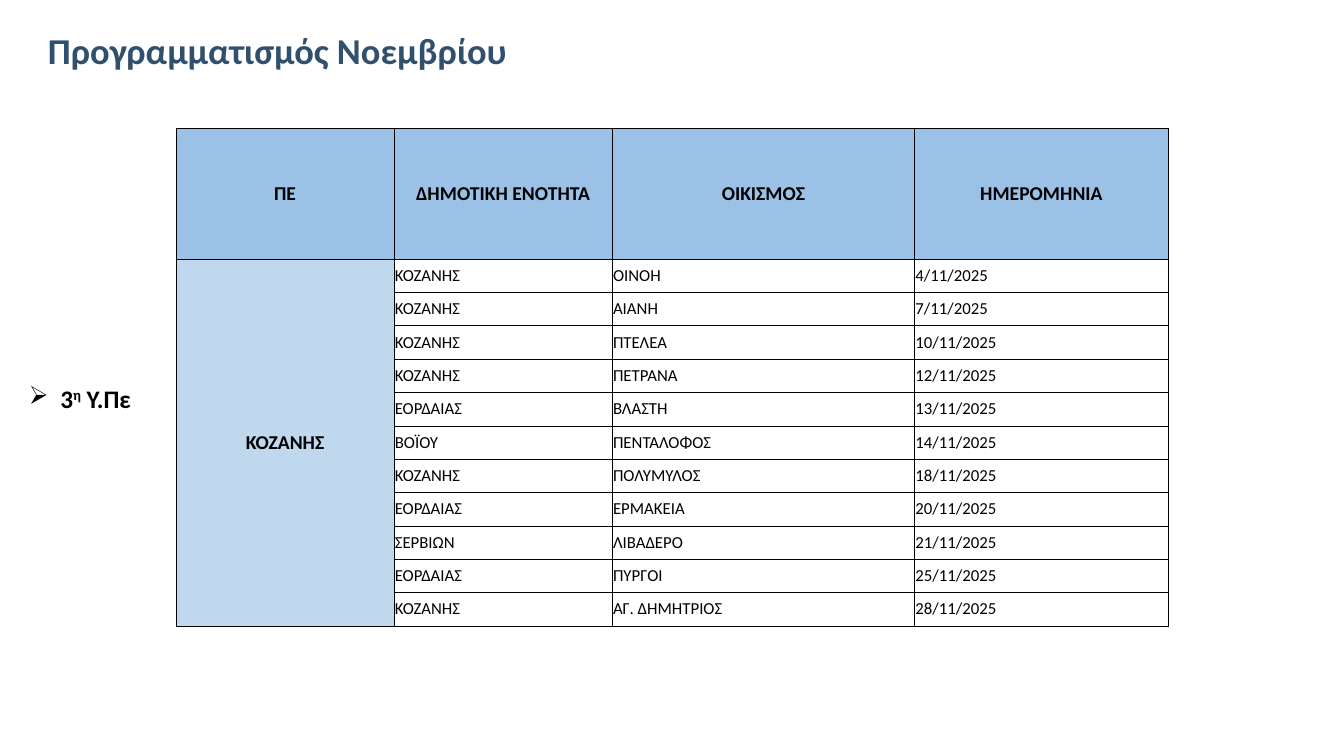
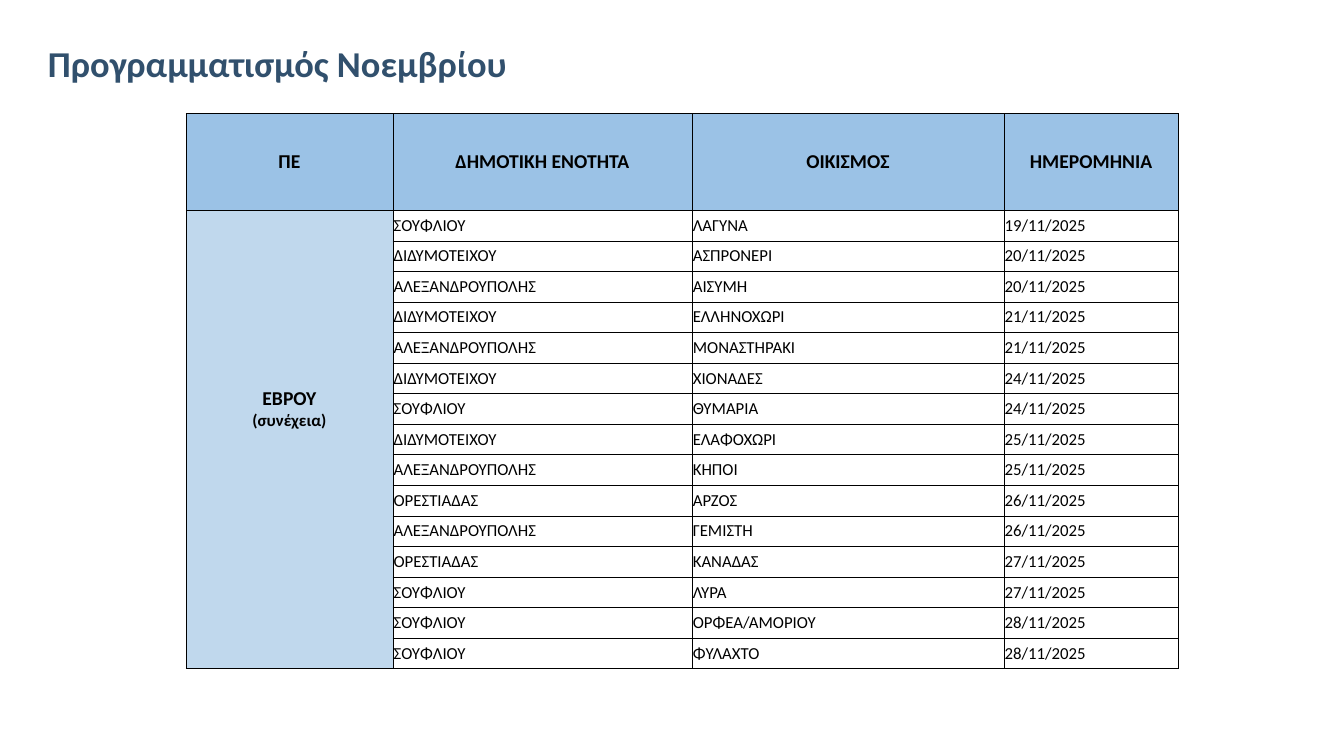
from lxml import etree
from pptx import Presentation
from pptx.dml.color import RGBColor as RGB
from pptx.enum.text import MSO_ANCHOR as ANCHOR, PP_ALIGN as ALIGN
from pptx.oxml.ns import qn
from pptx.util import Cm, Pt

COLORS = {"title": "31506D", "text": "000000", "border": "000000",
          "header": "9BC2E6", "region": "C0D8ED"}
FONT = "Calibri"
TITLE = "Προγραμματισμός Νοεμβρίου"
HEADERS = ["ΠΕ", "ΔΗΜΟΤΙΚΗ ΕΝΟΤΗΤΑ", "ΟΙΚΙΣΜΟΣ", "ΗΜΕΡΟΜΗΝΙΑ"]

SCHEDULES = [
    {
        "title_height": 1.3,
        "left": 4.44, "top": 3.23,
        "widths": [5.49, 5.5, 7.62, 6.39],
        "header_height": 3.3, "row_height": 0.84,
        "region": [("ΚΟΖΑΝΗΣ", 14)], "region_bottom": 0.12,
        "rows": [
            ("ΚΟΖΑΝΗΣ", "ΟΙΝΟΗ", "4/11/2025"),
            ("ΚΟΖΑΝΗΣ", "ΑΙΑΝΗ", "7/11/2025"),
            ("ΚΟΖΑΝΗΣ", "ΠΤΕΛΕΑ", "10/11/2025"),
            ("ΚΟΖΑΝΗΣ", "ΠΕΤΡΑΝΑ", "12/11/2025"),
            ("ΕΟΡΔΑΙΑΣ", "ΒΛΑΣΤΗ", "13/11/2025"),
            ("ΒΟΪΟΥ", "ΠΕΝΤΑΛΟΦΟΣ", "14/11/2025"),
            ("ΚΟΖΑΝΗΣ", "ΠΟΛΥΜΥΛΟΣ", "18/11/2025"),
            ("ΕΟΡΔΑΙΑΣ", "ΕΡΜΑΚΕΙΑ", "20/11/2025"),
            ("ΣΕΡΒΙΩΝ", "ΛΙΒΑΔΕΡΟ", "21/11/2025"),
            ("ΕΟΡΔΑΙΑΣ", "ΠΥΡΓΟΙ", "25/11/2025"),
            ("ΚΟΖΑΝΗΣ", "ΑΓ. ΔΗΜΗΤΡΙΟΣ", "28/11/2025"),
        ],
        "label": [("3", 0), ("η", 30000), (" Υ.Πε", 0)],
    },
    {
        "title_height": 1.63,
        "left": 4.69, "top": 2.86,
        "widths": [5.21, 7.54, 7.86, 4.39],
        "header_height": 2.44, "row_height": 0.77,
        "region": [("ΕΒΡΟΥ", 14), ("(συνέχεια)", 12)], "region_bottom": 1.66,
        "rows": [
            ("ΣΟΥΦΛΙΟΥ", "ΛΑΓΥΝΑ", "19/11/2025"),
            ("ΔΙΔΥΜΟΤΕΙΧΟΥ", "ΑΣΠΡΟΝΕΡΙ", "20/11/2025"),
            ("ΑΛΕΞΑΝΔΡΟΥΠΟΛΗΣ", "ΑΙΣΥΜΗ", "20/11/2025"),
            ("ΔΙΔΥΜΟΤΕΙΧΟΥ", "ΕΛΛΗΝΟΧΩΡΙ", "21/11/2025"),
            ("ΑΛΕΞΑΝΔΡΟΥΠΟΛΗΣ", "ΜΟΝΑΣΤΗΡΑΚΙ", "21/11/2025"),
            ("ΔΙΔΥΜΟΤΕΙΧΟΥ", "ΧΙΟΝΑΔΕΣ", "24/11/2025"),
            ("ΣΟΥΦΛΙΟΥ", "ΘΥΜΑΡΙΑ", "24/11/2025"),
            ("ΔΙΔΥΜΟΤΕΙΧΟΥ", "ΕΛΑΦΟΧΩΡΙ", "25/11/2025"),
            ("ΑΛΕΞΑΝΔΡΟΥΠΟΛΗΣ", "ΚΗΠΟΙ", "25/11/2025"),
            ("ΟΡΕΣΤΙΑΔΑΣ", "ΑΡΖΟΣ", "26/11/2025"),
            ("ΑΛΕΞΑΝΔΡΟΥΠΟΛΗΣ", "ΓΕΜΙΣΤΗ", "26/11/2025"),
            ("ΟΡΕΣΤΙΑΔΑΣ", "ΚΑΝΑΔΑΣ", "27/11/2025"),
            ("ΣΟΥΦΛΙΟΥ", "ΛΥΡΑ", "27/11/2025"),
            ("ΣΟΥΦΛΙΟΥ", "ΟΡΦΕΑ/ΑΜΟΡΙΟΥ", "28/11/2025"),
            ("ΣΟΥΦΛΙΟΥ", "ΦΥΛΑΧΤΟ", "28/11/2025"),
        ],
        "label": [],
    },
]


def add_run(p, text, size, bold=True, color="text"):
    r = p.add_run()
    r.text = text
    r.font.name = FONT
    r.font.size = Pt(size)
    r.font.bold = bold
    r.font.color.rgb = RGB.from_string(COLORS[color])
    return r


def format_cell(cell, fill=None):
    cell.vertical_anchor = ANCHOR.MIDDLE
    cell.margin_left = cell.margin_right = Cm(0.02)
    cell.margin_top = cell.margin_bottom = Cm(0.12)
    tcPr = cell._tc.get_or_add_tcPr()
    for side in ("lnL", "lnR", "lnT", "lnB"):
        ln = etree.SubElement(tcPr, qn(f"a:{side}"), w=str(Pt(0.5)))
        solid = etree.SubElement(ln, qn("a:solidFill"))
        etree.SubElement(solid, qn("a:srgbClr"), val=COLORS["border"])
    if fill:
        cell.fill.solid()
        cell.fill.fore_color.rgb = RGB.from_string(COLORS[fill])
    else:
        cell.fill.background()


prs = Presentation()
prs.slide_width = Cm(33.87)
prs.slide_height = Cm(19.05)

for schedule in SCHEDULES:
    s = prs.slides.add_slide(prs.slide_layouts[6])

    sp = s.shapes.add_textbox(Cm(0.91), Cm(0.64), Cm(31.5), Cm(schedule["title_height"]))
    tf = sp.text_frame
    tf.word_wrap = True
    tf.vertical_anchor = ANCHOR.BOTTOM
    tf.margin_left = Cm(0.3)
    p = tf.paragraphs[0]
    p.line_spacing = 0.9
    add_run(p, TITLE, 26, color="title")

    rows = schedule["rows"]
    heights = [schedule["header_height"]] + [schedule["row_height"]] * len(rows)
    widths = schedule["widths"]
    table = s.shapes.add_table(
        len(heights), len(widths), Cm(schedule["left"]), Cm(schedule["top"]),
        Cm(sum(widths)), Cm(sum(heights))).table
    table.first_row = table.horz_banding = False
    for column, width in zip(table.columns, widths):
        column.width = Cm(width)
    for row, height in zip(table.rows, heights):
        row.height = Cm(height)

    for j, header in enumerate(HEADERS):
        cell = table.cell(0, j)
        format_cell(cell, "header")
        p = cell.text_frame.paragraphs[0]
        p.alignment = ALIGN.CENTER
        add_run(p, header, 14)

    for i, values in enumerate(rows, 1):
        format_cell(table.cell(i, 0), "region")
        for j, value in enumerate(values, 1):
            cell = table.cell(i, j)
            format_cell(cell)
            add_run(cell.text_frame.paragraphs[0], value, 12, bold=False)

    region = table.cell(1, 0)
    region.merge(table.cell(len(rows), 0))
    region.margin_bottom = Cm(schedule["region_bottom"])
    tf = region.text_frame
    for i, (text, size) in enumerate(schedule["region"]):
        p = tf.add_paragraph() if i else tf.paragraphs[0]
        p.alignment = ALIGN.CENTER
        add_run(p, text, size)

    if schedule["label"]:
        sp = s.shapes.add_textbox(Cm(0.48), Cm(9.53), Cm(3.9), Cm(1.02))
        tf = sp.text_frame
        tf.word_wrap = True
        p = tf.paragraphs[0]
        pPr = p._p.get_or_add_pPr()
        pPr.set("marL", str(Cm(0.79)))
        pPr.set("indent", str(-Cm(0.79)))
        etree.SubElement(pPr, qn("a:buChar"), char="➢")
        for text, baseline in schedule["label"]:
            r = add_run(p, text, 18)
            if baseline:
                r.font._element.set("baseline", str(baseline))

prs.save("out.pptx")
